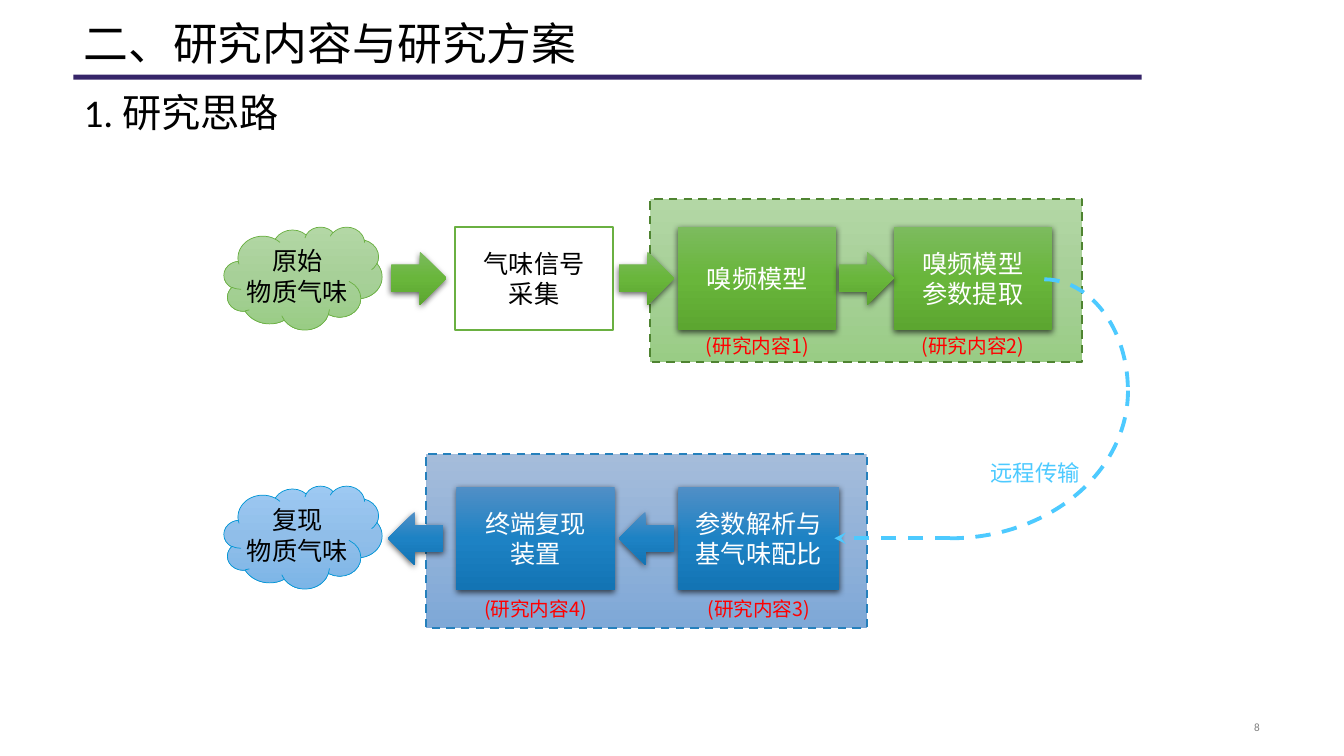
"""Build the research approach slide with its two process lanes."""
import lxml.etree
import pptx
import pptx.dml.color
import pptx.enum.dml
import pptx.enum.shapes
import pptx.enum.text
import pptx.oxml
import pptx.oxml.ns
import pptx.util

Pt = pptx.util.Pt
SHAPES = pptx.enum.shapes.MSO_SHAPE
ALIGN = pptx.enum.text.PP_ALIGN
ANCHOR = pptx.enum.text.MSO_ANCHOR
DASH = pptx.enum.dml.MSO_LINE.DASH
LATIN, CHINESE = "Calibri", "Noto Sans CJK SC"
COLORS = {
    "black": "000000", "white": "FFFFFF", "gray": "808080", "red": "FF0000",
    "rule": "362569", "link": "4DCAFF",
    "green line": "6AB041", "green border": "4F8431",
    "blue line": "0096D6", "blue border": "2580BC",
}
GRADIENTS = {
    "green panel": ("B3D7A5", "A7D098", "99CC85"),
    "green node": ("7CBB5E", "69B63B", "5CA630"),
    "blue panel": ("A5BCDA", "92B2D9", "7EA8D7"),
    "blue cloud": ("9DC9F2", "90BEE9", "7CB5E7"),
    "blue node": ("508FC6", "1D82C4", "1374B4"),
}
NODE_WIDTH, NODE_HEIGHT = 113, 73.5
ARROW_WIDTH, ARROW_HEIGHT = 39.5, 38
GREEN_LANE = {
    "theme": "green", "cloud": "green panel", "panel": 304.5,
    "source": "原始\n物质气味", "cloud_top": 20, "node_top": 20, "label_top": 92.7,
    "arrow": SHAPES.RIGHT_ARROW, "arrows": (119.5, 282, 439),
    "nodes": [(165, 113, "气味信号\n采集", None),
              (324.5, 113, "嗅频模型", "(研究内容1)"),
              (478.5, 113, "嗅频模型\n参数提取", "(研究内容2)")],
}
BLUE_LANE = {
    "theme": "blue", "cloud": "blue cloud", "panel": 144,
    "source": "复现\n物质气味", "cloud_top": 23, "node_top": 23.8, "label_top": 98.6,
    "arrow": SHAPES.LEFT_ARROW, "arrows": (117.2, 282),
    "nodes": [(166, 113, "终端复现\n装置", "(研究内容4)"),
              (324.5, 115, "参数解析与\n基气味配比", "(研究内容3)")],
}


def color(name):
    """Return the named colour as an RGB value."""
    return pptx.dml.color.RGBColor.from_string(COLORS[name])


def write(frame, text, size, font, ink, align=ALIGN.LEFT, anchor=ANCHOR.MIDDLE):
    """Fill a text frame with one paragraph per line."""
    frame.word_wrap = True
    frame.vertical_anchor = anchor
    for index, line in enumerate(text.split("\n")):
        paragraph = frame.paragraphs[0] if index == 0 else frame.add_paragraph()
        paragraph.alignment = align
        paragraph.space_before = Pt(0)
        run = paragraph.add_run()
        run.text = line
        run.font.size = Pt(size)
        run.font.name = font
        run.font.color.rgb = color(ink)
        east_asian = lxml.etree.SubElement(run.font._element, pptx.oxml.ns.qn("a:ea"))
        east_asian.set("typeface", CHINESE)


def add_text(slide, box, *style, **options):
    """Add a text box at the given box."""
    shape = slide.shapes.add_textbox(*map(Pt, box))
    write(shape.text_frame, *style, **options)
    return shape


def add_block(slide, kind, box, fill=None, line=None, width=1.5, dashed=False):
    """Add a preset shape with a plain, gradient or empty fill."""
    shape = slide.shapes.add_shape(kind, *map(Pt, box))
    shape.shadow.inherit = False
    if fill in GRADIENTS:
        shape.fill.gradient()
        shape.fill.gradient_angle = 270
        stops = shape._element.spPr.find(".//" + pptx.oxml.ns.qn("a:gsLst"))
        for stop in list(stops):
            stops.remove(stop)
        for position, value in zip((0, 50000, 100000), GRADIENTS[fill]):
            stop = lxml.etree.SubElement(stops, pptx.oxml.ns.qn("a:gs"), pos=str(position))
            lxml.etree.SubElement(stop, pptx.oxml.ns.qn("a:srgbClr"), val=value)
    elif fill:
        shape.fill.solid()
        shape.fill.fore_color.rgb = color(fill)
    else:
        shape.fill.background()
    if line:
        style_line(shape.line, line, width, dashed)
    else:
        shape.line.fill.background()
    return shape


def style_line(line, ink, width, dashed):
    """Set colour, width and dash of a line."""
    line.color.rgb = color(ink)
    line.width = Pt(width)
    if dashed:
        line.dash_style = DASH


def add_shadow(shape):
    """Give a shape a soft shadow below it."""
    effects = shape._element.spPr.find(pptx.oxml.ns.qn("a:effectLst"))
    effects.append(pptx.oxml.parse_xml(
        f'<a:outerShdw {pptx.oxml.ns.nsdecls("a")} blurRad="57150" dist="19050" '
        'dir="5400000" algn="ctr" rotWithShape="0"><a:srgbClr val="000000">'
        '<a:alpha val="63000"/></a:srgbClr></a:outerShdw>'))


def build_heading(slide, box):
    """Place the title, the rule and the section line."""
    left, top, width, height = box
    add_block(slide, SHAPES.RECTANGLE, (left, top + 53.3, 763, 3.6), "rule")
    title, body = slide.placeholders[0], slide.placeholders[1]
    parts = ((title, 0, 54, "二、研究内容与研究方案", 32, ANCHOR.BOTTOM),
             (body, 62, height - 62, "1. 研究思路", 28, ANCHOR.MIDDLE))
    for shape, offset, part_height, text, size, anchor in parts:
        shape.left, shape.top = Pt(left), Pt(top + offset)
        shape.width, shape.height = Pt(width), Pt(part_height)
        paragraph = shape.text_frame.paragraphs[0]
        properties = paragraph._p.get_or_add_pPr()
        properties.set("marL", "0")
        properties.set("indent", "0")
        lxml.etree.SubElement(properties, pptx.oxml.ns.qn("a:buNone"))
        paragraph.line_spacing = 0.9
        write(shape.text_frame, text, size, LATIN, "black", anchor=anchor)


def build_lane(slide, box, lane):
    """Place one lane: panel, cloud, nodes, arrows and captions."""
    left, top, width, height = box
    theme = lane["theme"]
    panel_box = (left + lane["panel"], top, width - lane["panel"], height)
    add_block(slide, SHAPES.RECTANGLE, panel_box, f"{theme} panel",
              f"{theme} border", dashed=True)
    cloud_box = (left, top + lane["cloud_top"], NODE_WIDTH, NODE_HEIGHT)
    cloud = add_block(slide, SHAPES.CLOUD, cloud_box, lane["cloud"], f"{theme} line", 0.5)
    cloud.text_frame.margin_left = cloud.text_frame.margin_right = 0
    write(cloud.text_frame, lane["source"], 18, LATIN, "black", ALIGN.CENTER)
    node_top = top + lane["node_top"]
    for offset, node_width, text, caption in lane["nodes"]:
        node_box = (left + offset, node_top, node_width, NODE_HEIGHT)
        if caption:
            node = add_block(slide, SHAPES.RECTANGLE, node_box, f"{theme} node")
            add_shadow(node)
            caption_box = (left + offset, top + lane["label_top"], node_width, 24.5)
            add_text(slide, caption_box, caption, 14, CHINESE, "red", ALIGN.CENTER)
        else:
            node = add_block(slide, SHAPES.RECTANGLE, node_box, "white", f"{theme} line")
        ink = "white" if caption else "black"
        write(node.text_frame, text, 18, LATIN, ink, ALIGN.CENTER)
    arrow_top = node_top + (NODE_HEIGHT - ARROW_HEIGHT) / 2
    for offset in lane["arrows"]:
        arrow_box = (left + offset, arrow_top, ARROW_WIDTH, ARROW_HEIGHT)
        add_shadow(add_block(slide, lane["arrow"], arrow_box, f"{theme} node"))


def build_link(slide, box):
    """Place the dashed curve from the upper to the lower lane."""
    left, top, width, height = box
    right, bottom = left + width, top + height
    arcs = (((right - 119.5, top, 119.5, 159), 162, 215.84),
            ((right - 254, bottom - 211, 254, 211), 0, 54))
    for arc_box, start, end in arcs:
        arc = add_block(slide, SHAPES.ARC, arc_box, None, "link", 2.75, True)
        arc.adjustments[0], arc.adjustments[1] = start, end
    connector = slide.shapes.add_connector(
        pptx.enum.shapes.MSO_CONNECTOR.STRAIGHT,
        Pt(right - 127), Pt(bottom), Pt(left), Pt(bottom))
    style_line(connector.line, "link", 2.75, True)
    lxml.etree.SubElement(connector.line._get_or_add_ln(),
                          pptx.oxml.ns.qn("a:tailEnd"), type="stealth")
    lxml.etree.SubElement(connector._element.spPr, pptx.oxml.ns.qn("a:effectLst"))
    label = add_text(slide, (left + 104.5, top + 124.5, 79, 26.5),
                     "远程传输", 16, CHINESE, "link")
    label.text_frame.word_wrap = False


def main():
    """Build and save the presentation."""
    presentation = pptx.Presentation()
    presentation.slide_width, presentation.slide_height = Pt(960), Pt(540)
    slide = presentation.slides.add_slide(presentation.slide_layouts[1])
    build_heading(slide, (52.5, 0, 854.5, 101.5))
    build_lane(slide, (160, 142, 613, 116.5), GREEN_LANE)
    build_lane(slide, (160, 324, 459, 124.5), BLUE_LANE)
    build_link(slide, (596, 199.5, 209.7, 185))
    add_text(slide, (678, 511, 229, 16.5), "8", 8, LATIN, "gray", ALIGN.RIGHT)
    presentation.save("out.pptx")


if __name__ == "__main__":
    main()
